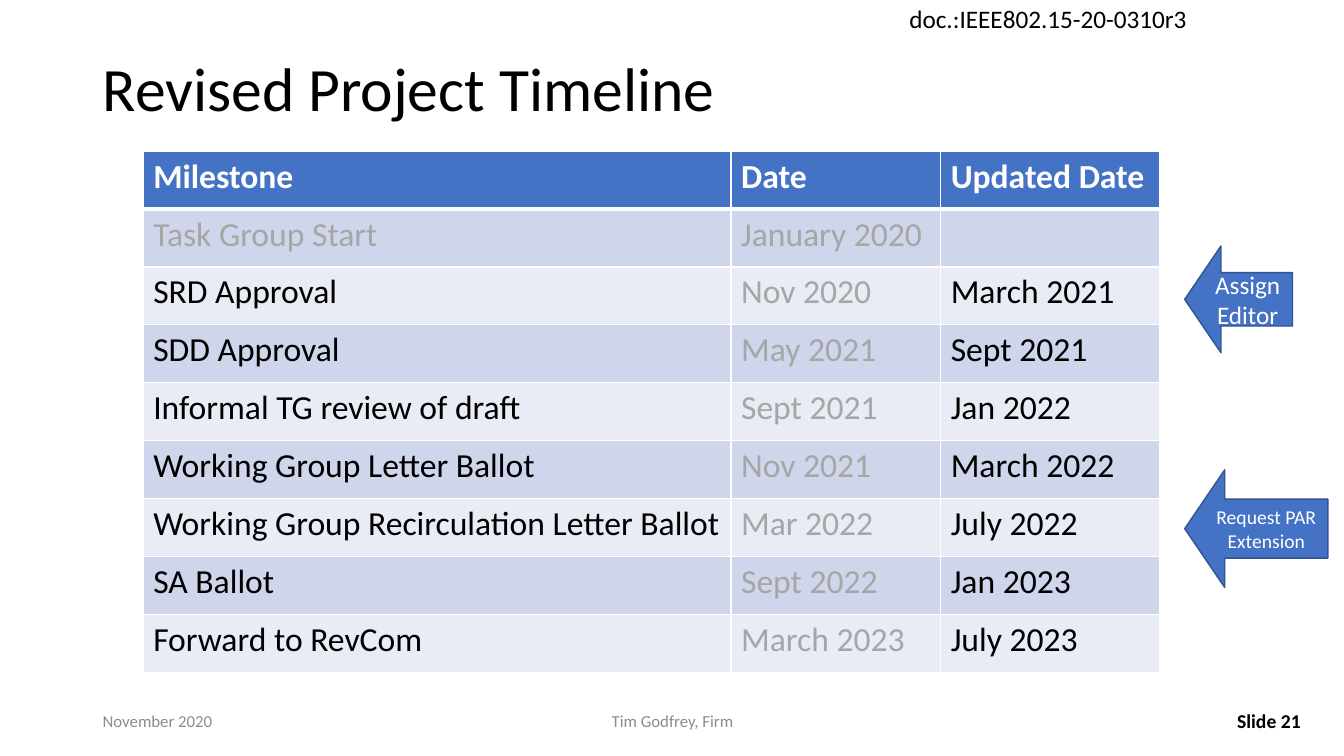
from lxml import etree
from pptx import Presentation
from pptx.dml.color import RGBColor
from pptx.enum.shapes import MSO_SHAPE
from pptx.enum.text import MSO_ANCHOR, MSO_AUTO_SIZE, PP_ALIGN
from pptx.oxml.ns import qn
from pptx.util import Pt

PX = 9144  # 100 px to the inch
LEFT, MID, RIGHT = PP_ALIGN.LEFT, PP_ALIGN.CENTER, PP_ALIGN.RIGHT
TOP, CENTRE = MSO_ANCHOR.TOP, MSO_ANCHOR.MIDDLE
ARROW = MSO_SHAPE.LEFT_ARROW
FIXED = MSO_AUTO_SIZE.NONE

BLUE, EDGE = "4472C4", "325491"
BLACK, WHITE = "000000", "FFFFFF"
DIM, GREY = "A6A6A6", "8C8C8C"
BANDS = ("CFD5EA", "E9EBF5")

COLS = (583, 208, 217)
ROWS = [
    ("Milestone", "Date", "Updated Date"),
    ("Task Group Start", "January 2020", ""),
    ("SRD Approval", "Nov 2020", "March 2021"),
    ("SDD Approval", "May 2021", "Sept 2021"),
    ("Informal TG review of draft", "Sept 2021", "Jan 2022"),
    ("Working Group Letter Ballot", "Nov 2021", "March 2022"),
    ("Working Group Recirculation Letter Ballot", "Mar 2022", "July 2022"),
    ("SA Ballot", "Sept 2022", "Jan 2023"),
    ("Forward to RevCom", "March 2023", "July 2023"),
]


def rgb(code):
    return RGBColor.from_string(code)


def emu(*box):
    return [n * PX for n in box]


def write(frame, text, size, color, align=LEFT, bold=False):
    frame.text = text
    para = frame.paragraphs[0]
    para.alignment = align
    font = para.font
    font.name, font.size, font.bold = "Calibri", Pt(size), bold
    font.color.rgb = rgb(color)
    return para


def label(slide, box, text, size, color, align=LEFT, bold=False,
          anchor=CENTRE, wrap=True):
    frame = slide.shapes.add_textbox(*emu(*box)).text_frame
    frame.word_wrap = wrap
    frame.vertical_anchor = anchor
    write(frame, text, size, color, align, bold)


def title(slide, box, text):
    shape = slide.shapes.title
    shape.left, shape.top, shape.width, shape.height = emu(*box)
    frame = shape.text_frame
    frame.auto_size = FIXED
    frame.vertical_anchor = CENTRE
    write(frame, text, 44, BLACK).line_spacing = 0.9


def border(cell, head, first):
    """Draw white cell edges, thick between the header and the body."""
    props = cell._tc.get_or_add_tcPr()
    for side in "LRTB":
        thick = (head and side == "B") or (first and side == "T")
        line = etree.SubElement(props, qn(f"a:ln{side}"),
                                w=str(Pt(3 if thick else 1)))
        fill = etree.SubElement(line, qn("a:solidFill"))
        etree.SubElement(fill, qn("a:srgbClr"), val=WHITE)


def timeline(slide, box):
    grid = slide.shapes.add_table(len(ROWS), len(COLS), *emu(*box)).table
    for col, width in zip(grid.columns, COLS):
        col.width = width * PX
    for r, row in enumerate(ROWS):
        grid.rows[r].height = box[3] * PX // len(ROWS)
        head = r == 0
        for c, text in enumerate(row):
            cell = grid.cell(r, c)
            border(cell, head, r == 1)
            cell.fill.solid()
            cell.fill.fore_color.rgb = rgb(BLUE if head else BANDS[(r - 1) % 2])
            dim = r == 1 or c == 1
            color = WHITE if head else DIM if dim else BLACK
            write(cell.text_frame, text, 24, color, bold=head)


def arrow(slide, box, text, size):
    shape = slide.shapes.add_shape(ARROW, *emu(*box))
    shape.shadow.inherit = False
    shape.adjustments[0], shape.adjustments[1] = 0.5, 0.34
    shape.fill.solid()
    shape.fill.fore_color.rgb = rgb(BLUE)
    shape.line.color.rgb = rgb(EDGE)
    shape.line.width = Pt(1)
    shape.text_frame.word_wrap = True
    shape.text_frame.vertical_anchor = CENTRE
    write(shape.text_frame, text, size, WHITE, MID)


def footer(slide, top, high):
    label(slide, (92, top, 300, high), "November 2020", 12, GREY)
    label(slide, (442, top, 450, high), "Tim Godfrey, Firm", 12, GREY, MID)
    label(slide, (975, top, 325, high), "Slide 21", 14, BLACK, RIGHT, True)


def main():
    deck = Presentation()
    deck.slide_width, deck.slide_height = emu(1333, 750)
    slide = deck.slides.add_slide(deck.slide_layouts.get_by_name("Title Only"))
    label(slide, (892, -2, 298, 40), "doc.:IEEE802.15-20-0310r3", 18, BLACK,
          anchor=TOP, wrap=False)
    title(slide, (92, 40, 1150, 102), "Revised Project Timeline")
    timeline(slide, (142, 150, sum(COLS), 517))
    arrow(slide, (1175, 466, 142, 117), "Request PAR Extension", 14)
    arrow(slide, (1175, 244, 107, 106), "Assign Editor", 18)
    footer(slide, 695, 40)
    deck.save("out.pptx")


if __name__ == "__main__":
    main()
